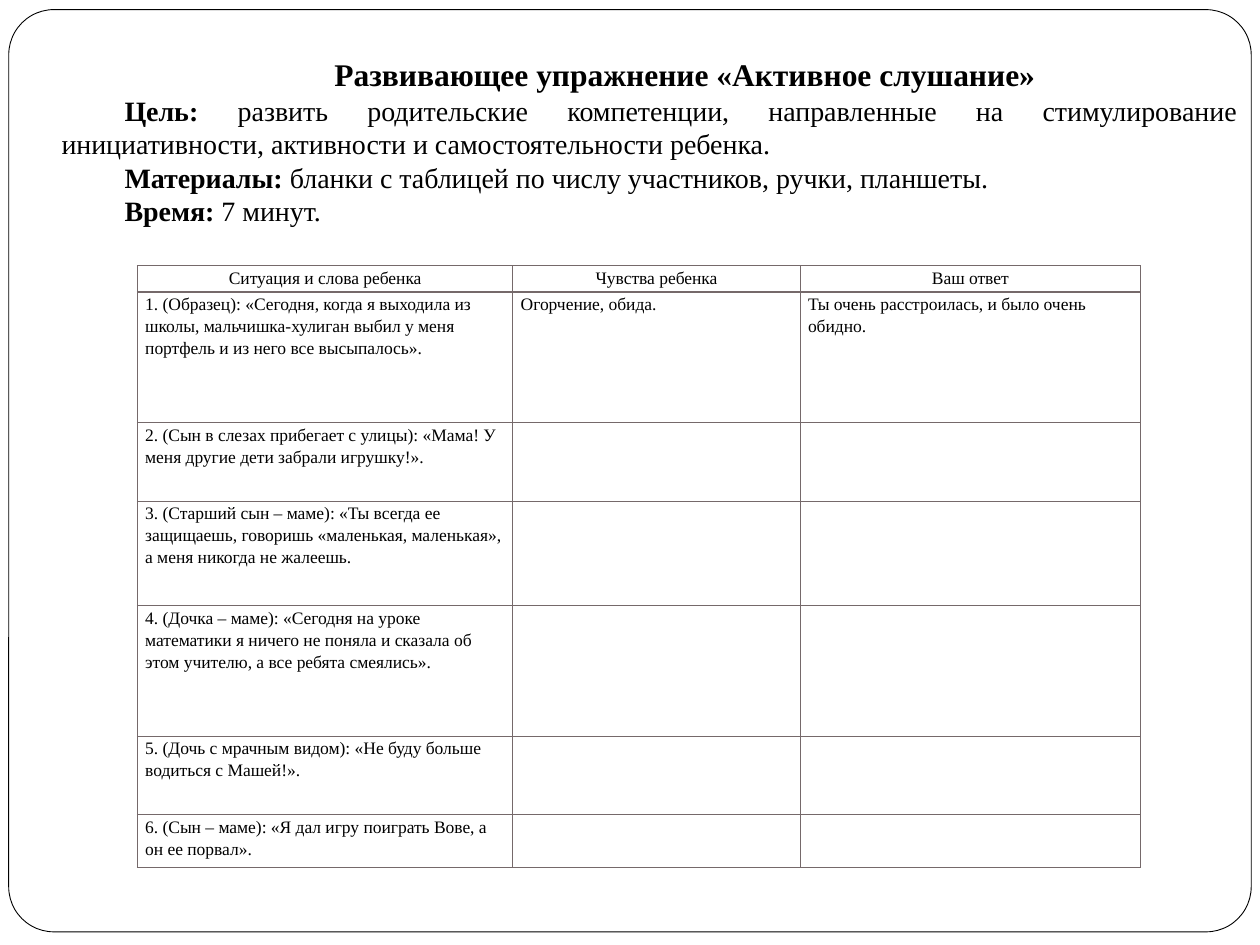
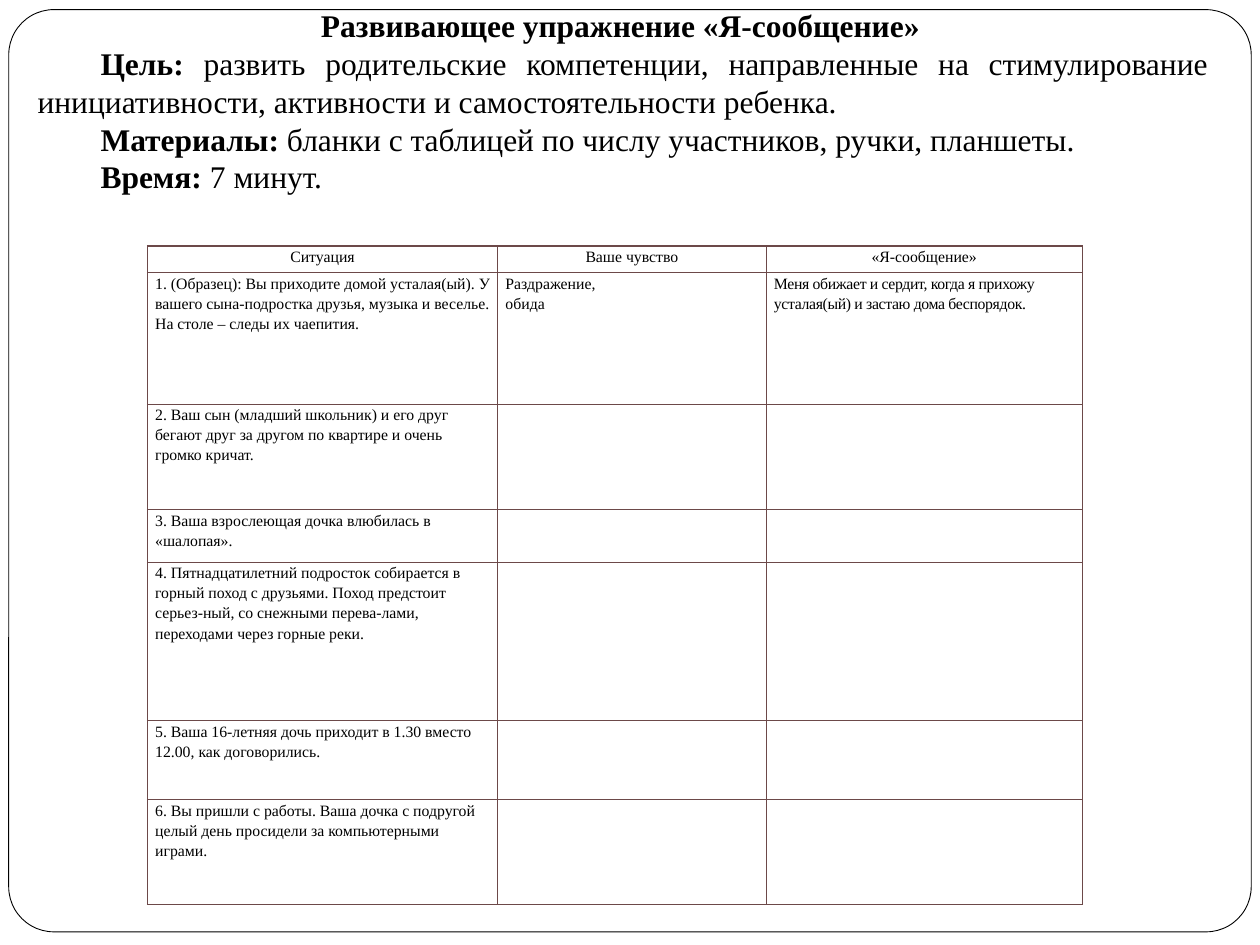
"""Build two exercise slides, each with an introduction and a worksheet table."""
from dataclasses import dataclass

import lxml.etree
import pptx
import pptx.dml.color
import pptx.enum.shapes
import pptx.enum.text
import pptx.oxml.ns
import pptx.util

Pt = pptx.util.Pt
Align = pptx.enum.text.PP_ALIGN

INTRODUCTION = [
    ("Цель: ", "развить родительские компетенции, направленные на стимулирование "
               "инициативности, активности и самостоятельности ребенка."),
    ("Материалы:", " бланки с таблицей по числу участников, ручки, планшеты."),
    ("Время: ", "7 минут."),
]

EXERCISES = [
    {
        "title": " Развивающее упражнение «Активное слушание»",
        "title_indent": 36,
        "body_margin": 0,
        "body_size": 16,
        "text_box": (28.1, 28.1, 686.2, 128.2),
        "table_origin": (78.5, 151.9),
        "columns": [214.6, 164.2, 194.4],
        "row_lines": [1, 5, 3, 4, 5, 3, 2],
        "line_pitch": 14.94,
        "cell_size": 10,
        "border": "75696A",
        "headers": ["Ситуация и слова ребенка", "Чувства ребенка", "Ваш ответ"],
        "situations": [
            "1. (Образец): «Сегодня, когда я выходила из школы, мальчишка-хулиган "
            "выбил у меня портфель и из него все высыпалось».",
            "2. (Сын в слезах прибегает с улицы): «Мама! У меня другие дети забрали игрушку!».",
            "3. (Старший сын – маме): «Ты всегда ее защищаешь, говоришь «маленькая, "
            "маленькая», а меня никогда не жалеешь.",
            "4. (Дочка – маме): «Сегодня на уроке математики я ничего не поняла и "
            "сказала об этом учителю, а все ребята смеялись».",
            "5. (Дочь с мрачным видом): «Не буду больше водиться с Машей!».",
            "6. (Сын – маме): «Я дал игру поиграть Вове, а он ее порвал».",
        ],
        "sample": ["Огорчение, обида.", "Ты очень расстроилась, и было очень обидно."],
        "answer_spacing": 0,
    },
    {
        "title": "Развивающее упражнение «Я-сообщение»",
        "title_indent": 0,
        "body_margin": 2.9,
        "body_size": 18,
        "text_box": (11.5, 0, 686.2, 138.2),
        "table_origin": (84.2, 140.6),
        "columns": [200.2, 153.4, 180.7],
        "row_lines": [1, 5, 4, 2, 6, 3, 4],
        "line_pitch": 15.06,
        "cell_size": 9,
        "border": "6C4949",
        "headers": ["Ситуация", "Ваше чувство", "«Я-сообщение»"],
        "situations": [
            "1. (Образец): Вы приходите домой усталая(ый). У вашего сына-подростка "
            "друзья, музыка и веселье. На столе – следы их чаепития.",
            "2. Ваш сын (младший школьник) и его друг бегают друг за другом по "
            "квартире и очень громко кричат.",
            "3. Ваша взрослеющая дочка влюбилась в «шалопая».",
            "4. Пятнадцатилетний подросток собирается в горный поход с друзьями. "
            "Поход предстоит серьез-ный, со снежными перева-лами, переходами через горные реки.",
            "5. Ваша 16-летняя дочь приходит в 1.30 вместо 12.00, как договорились.",
            "6. Вы пришли с работы. Ваша дочка с подругой целый день просидели за "
            "компьютерными играми.",
        ],
        "sample": ["Раздражение,\nобида",
                   "Меня обижает и сердит, когда я прихожу усталая(ый) и застаю дома беспорядок."],
        "answer_spacing": -0.2,
    },
]


@dataclass(frozen=True)
class Theme:
    font: str = "Times New Roman"
    ink: str = "000000"
    paper: str = "FFFFFF"
    title_size: float = 18
    frame_line: float = 0.5
    border_line: float = 0.75
    cell_line_spacing: float = 1.15
    cell_margin: float = 4.5
    first_line_indent: float = 36


THEME = Theme()


def color(value):
    return pptx.dml.color.RGBColor.from_string(value)


def write_text(paragraph, text, size, bold=False, align=Align.LEFT, margin=0,
               indent=0, line_spacing=None, spacing=0):
    paragraph.alignment = align
    if line_spacing:
        paragraph.line_spacing = line_spacing
    properties = paragraph._p.get_or_add_pPr()
    properties.set("marL", str(Pt(margin)))
    properties.set("indent", str(Pt(indent)))
    run = paragraph.add_run()
    run.text = text
    run.font.name = THEME.font
    run.font.size = Pt(size)
    run.font.bold = bold
    run.font.color.rgb = color(THEME.ink)
    if spacing:
        run._r.get_or_add_rPr().set("spc", str(round(spacing * 100)))


def add_frame(slide):
    frame = slide.shapes.add_shape(
        pptx.enum.shapes.MSO_SHAPE.ROUNDED_RECTANGLE, Pt(5), Pt(5.5), Pt(710), Pt(527))
    frame.adjustments[0] = 0.049
    frame.shadow.inherit = False
    frame.fill.solid()
    frame.fill.fore_color.rgb = color(THEME.paper)
    frame.line.color.rgb = color(THEME.ink)
    frame.line.width = Pt(THEME.frame_line)


def add_introduction(slide, exercise):
    box = slide.shapes.add_textbox(*map(Pt, exercise["text_box"]))
    frame = box.text_frame
    frame.word_wrap = True
    frame.auto_size = pptx.enum.text.MSO_AUTO_SIZE.SHAPE_TO_FIT_TEXT
    write_text(frame.paragraphs[0], exercise["title"], THEME.title_size, bold=True,
               align=Align.CENTER, indent=exercise["title_indent"])
    for label, description in INTRODUCTION:
        paragraph = frame.add_paragraph()
        for text, bold in ((label, True), (description, False)):
            write_text(paragraph, text, exercise["body_size"], bold=bold, align=Align.JUSTIFY,
                       margin=exercise["body_margin"], indent=THEME.first_line_indent)


def style_cell(cell, border):
    cell.margin_left = cell.margin_right = Pt(THEME.cell_margin)
    cell.margin_top = cell.margin_bottom = 0
    properties = cell._tc.get_or_add_tcPr()
    qualify = pptx.oxml.ns.qn
    for side in ("a:lnL", "a:lnR", "a:lnT", "a:lnB"):
        line = lxml.etree.SubElement(properties, qualify(side), w=str(Pt(THEME.border_line)))
        fill = lxml.etree.SubElement(line, qualify("a:solidFill"))
        lxml.etree.SubElement(fill, qualify("a:srgbClr"), val=border)
    cell.fill.background()


def add_worksheet(slide, exercise):
    widths = exercise["columns"]
    heights = [lines * exercise["line_pitch"] for lines in exercise["row_lines"]]
    left, top = exercise["table_origin"]
    table = slide.shapes.add_table(len(heights), len(widths), Pt(left), Pt(top),
                                   Pt(sum(widths)), Pt(sum(heights))).table
    table.first_row = table.horz_banding = False
    for column, width in zip(table.columns, widths):
        column.width = Pt(width)
    for row, height in zip(table.rows, heights):
        row.height = Pt(height)

    first, *others = exercise["situations"]
    contents = [exercise["headers"], [first, *exercise["sample"]]]
    contents += [[situation, "", ""] for situation in others]
    for row_index, texts in enumerate(contents):
        for column_index, text in enumerate(texts):
            cell = table.cell(row_index, column_index)
            style_cell(cell, exercise["border"])
            is_answer = (row_index, column_index) == (1, 2)
            for line_index, line in enumerate(text.splitlines()):
                frame = cell.text_frame
                paragraph = frame.add_paragraph() if line_index else frame.paragraphs[0]
                write_text(paragraph, line, exercise["cell_size"],
                           align=Align.LEFT if row_index else Align.CENTER,
                           line_spacing=THEME.cell_line_spacing,
                           spacing=exercise["answer_spacing"] if is_answer else 0)


def main():
    presentation = pptx.Presentation()
    presentation.slide_width, presentation.slide_height = Pt(720), Pt(540)
    for exercise in EXERCISES:
        slide = presentation.slides.add_slide(presentation.slide_layouts[6])
        add_frame(slide)
        add_introduction(slide, exercise)
        add_worksheet(slide, exercise)
    presentation.save("out.pptx")


if __name__ == "__main__":
    main()
